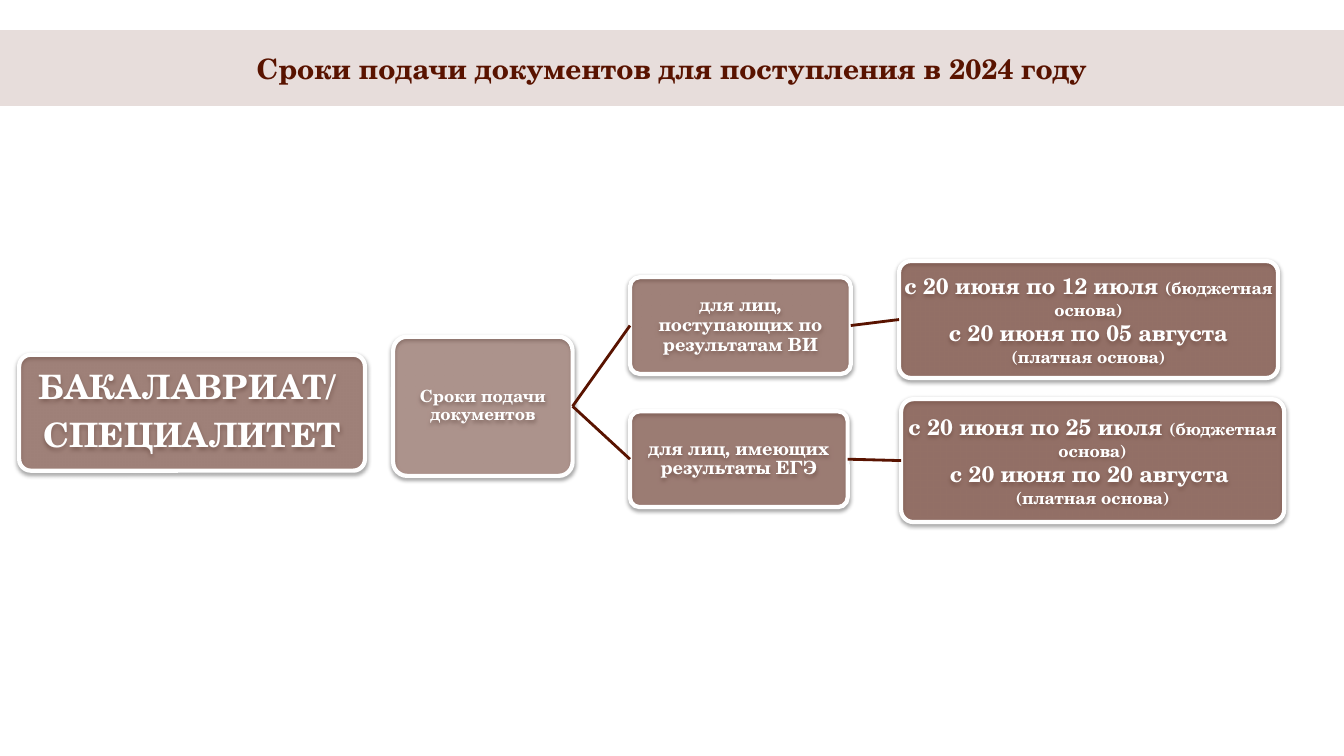
from pptx import Presentation
from pptx.dml.color import RGBColor as RGB
from pptx.enum.shapes import MSO_CONNECTOR as LINK, MSO_SHAPE as SHAPE
from pptx.enum.text import MSO_ANCHOR as ANCHOR, MSO_AUTO_SIZE as FIT, PP_ALIGN as ALIGN
from pptx.oxml import parse_xml
from pptx.oxml.ns import nsdecls, qn
from pptx.util import Pt

HUES = {"brown": "591300", "white": "FFFFFF", "black": "000000"}
FACE = "TeX Gyre Schola"
SHADOW = (
    f'<a:effectLst {nsdecls("a")}>'
    f'<a:outerShdw blurRad="{Pt(3.1)}" dist="{Pt(1.6)}" dir="5400000" rotWithShape="0">'
    f'<a:srgbClr val="{HUES["black"]}"><a:alpha val="38000"/></a:srgbClr>'
    '</a:outerShdw></a:effectLst>'
)


class Chart:
    """Draws the parts of one slide in a shared style."""

    def __init__(self, slide):
        self.slide = slide

    def tint(self, shape, hue, alpha):
        shape.fill.solid()
        shape.fill.fore_color.rgb = RGB.from_string(HUES[hue])
        color = shape.fill._xPr.find(qn("a:solidFill"))[0]
        color.append(parse_xml(f'<a:alpha {nsdecls("a")} val="{alpha * 1000}"/>'))

    def style(self, font, size, hue):
        font.name, font.size, font.bold = FACE, Pt(size), True
        font.color.rgb = RGB.from_string(HUES[hue])

    def title(self, text, top, width, height):
        band = self.slide.shapes.title
        band.left, band.top, band.width, band.height = Pt(0), Pt(top), Pt(width), Pt(height)
        self.tint(band, "brown", 14)
        frame = band.text_frame
        frame.text = text
        frame.auto_size, frame.word_wrap = FIT.NONE, True
        frame.vertical_anchor = ANCHOR.MIDDLE
        para = frame.paragraphs[0]
        para.alignment = ALIGN.CENTER
        self.style(para.font, 20, "brown")

    def box(self, area, alpha, lines, loose=True):
        """Each line is a list of (text, size) runs."""
        box = self.slide.shapes.add_shape(SHAPE.ROUNDED_RECTANGLE, *map(Pt, area))
        box.adjustments[0] = 0.1
        self.tint(box, "brown", alpha)
        box.line.color.rgb = RGB.from_string(HUES["white"])
        box.line.width = Pt(3)
        box._element.spPr.append(parse_xml(SHADOW))
        frame = box.text_frame
        frame.word_wrap, frame.vertical_anchor = True, ANCHOR.MIDDLE
        frame.margin_left = frame.margin_right = Pt(0.7)
        frame.margin_top = frame.margin_bottom = Pt(0.7)
        for i, runs in enumerate(lines):
            para = frame.add_paragraph() if i else frame.paragraphs[0]
            para.alignment = ALIGN.CENTER
            size = runs[0][1]
            if loose:
                para.line_spacing, para.space_after = 0.9, Pt(0.35 * size)
            self.style(para.font, size, "white")
            for text, points in runs:
                run = para.add_run()
                run.text = text
                if points != size:
                    run.font.size = Pt(points)
        return box

    def link(self, start, end):
        """Joins the right side of one box to the left side of the next."""
        line = self.slide.shapes.add_connector(LINK.STRAIGHT, 0, 0, 0, 0)
        line.begin_connect(start, 3)
        line.end_connect(end, 1)
        line.line.color.rgb = RGB.from_string(HUES["brown"])
        line.line.width = Pt(2)
        line._element.spPr.append(parse_xml(f'<a:effectLst {nsdecls("a")}/>'))


def main():
    deck = Presentation()
    deck.slide_width, deck.slide_height = Pt(960), Pt(540)
    chart = Chart(deck.slides.add_slide(deck.slide_layouts[5]))

    # Title band
    chart.title("Сроки подачи документов для поступления в 2024 году", 21.6, 960, 54)

    # Degree level and root of the tree
    chart.box((13.7, 253.4, 247, 82.8), 43, [[("БАКАЛАВРИАТ/ ", 24)], [("СПЕЦИАЛИТЕТ", 24)]])
    root = chart.box((280.8, 240.5, 128.2, 99.4), 36, [[("Сроки подачи документов", 12)]])

    # Branches: group of applicants, then its dates
    branches = [
        ("для лиц, поступающих по результатам ВИ", (450, 198, 157.7, 69.1), 43,
         "12 июля ", "05 августа", (642.2, 186.5, 270.7, 83.5)),
        ("для лиц, имеющих результаты ЕГЭ", (450, 293.8, 155.5, 68.4), 45,
         "25 июля ", "20 августа ", (643.7, 285.1, 273.6, 87.8)),
    ]
    for name, spot, alpha, budget, paid, area in branches:
        group = chart.box(spot, alpha, [[(name, 13)]])
        dates = chart.box(area, 50, [
            [("с 20 июня по " + budget, 16), ("(бюджетная основа)", 12)],
            [("с 20 июня по " + paid, 16)],
            [("(платная основа)", 12)],
        ], loose=False)
        chart.link(root, group)
        chart.link(group, dates)

    deck.save("out.pptx")


if __name__ == "__main__":
    main()
